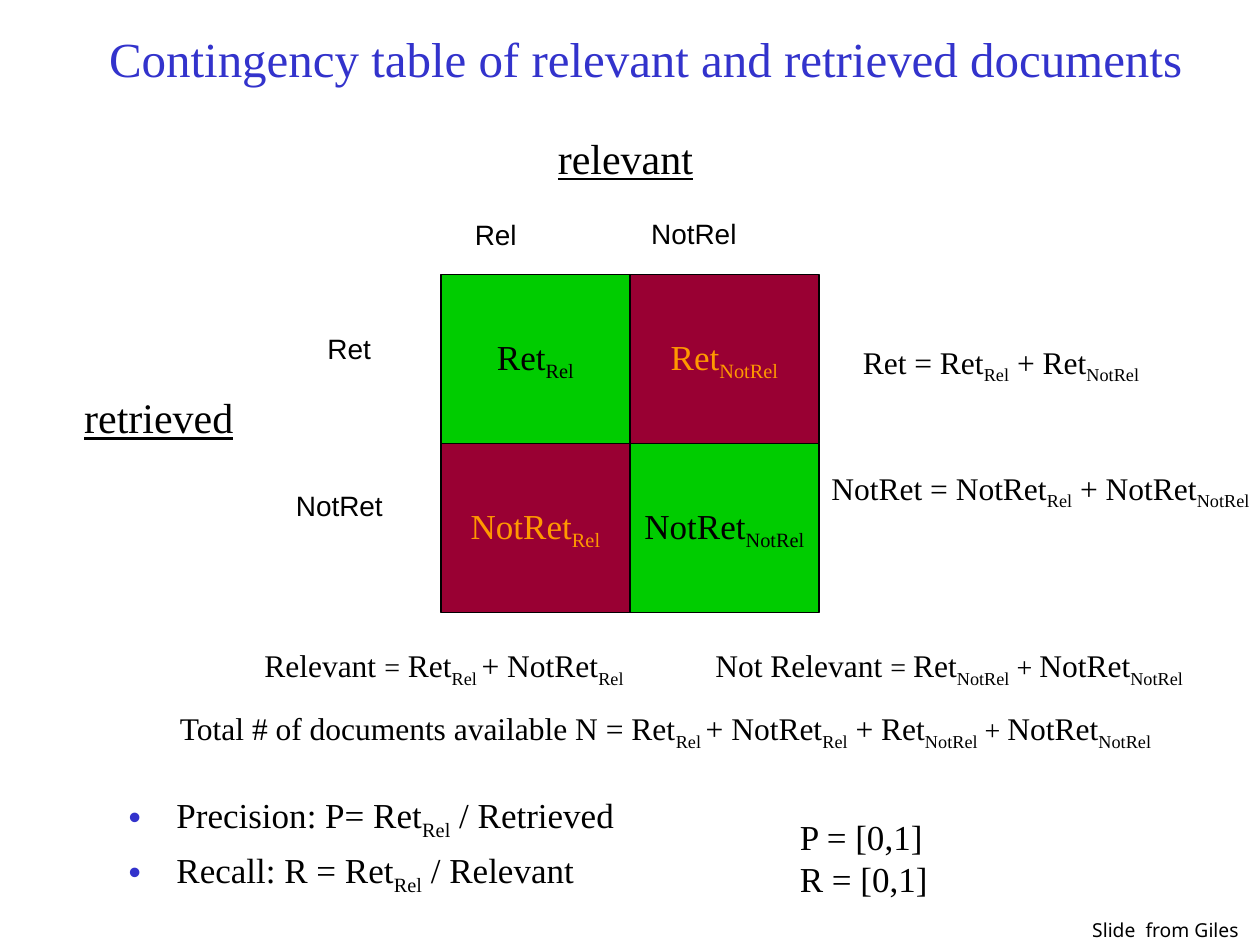
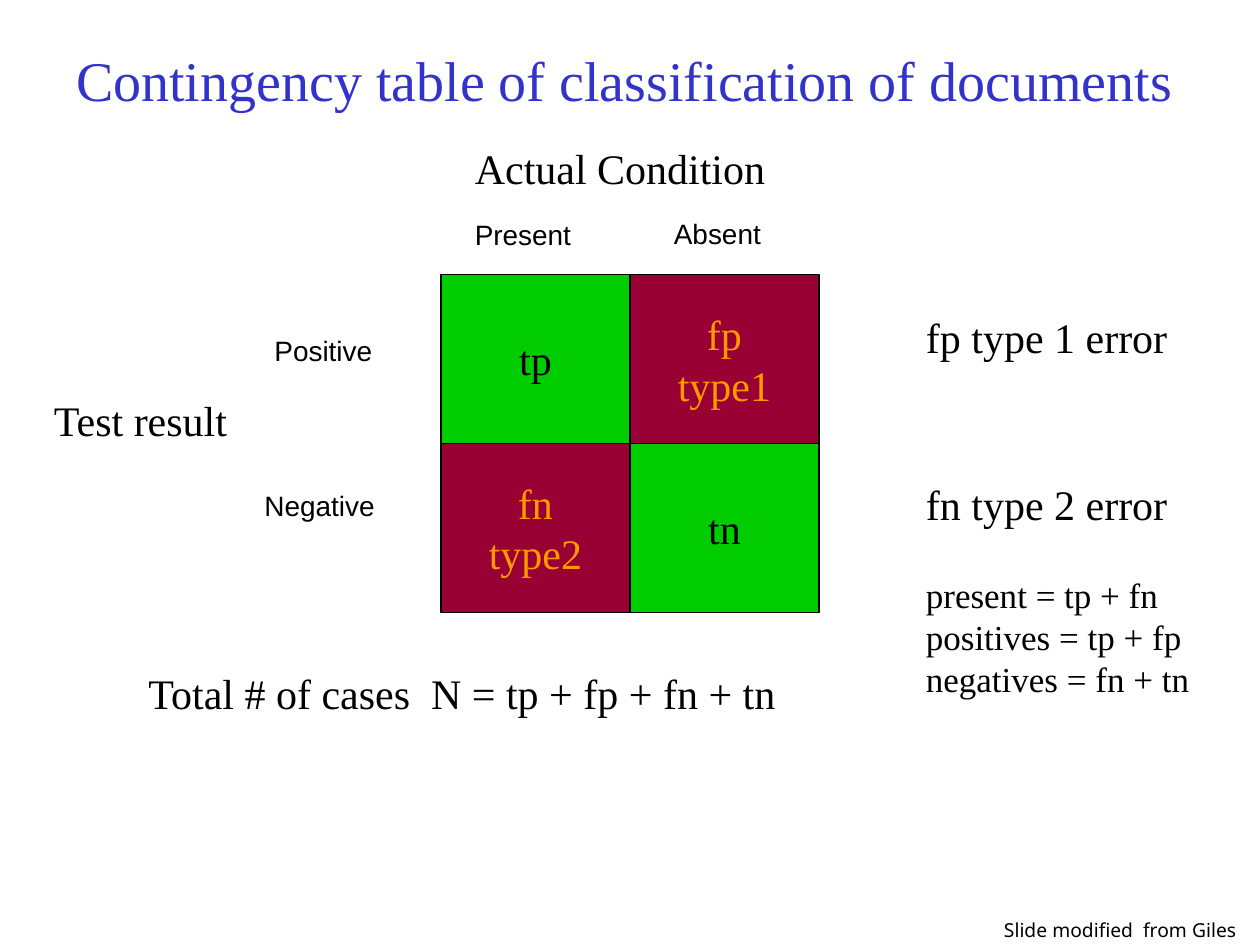
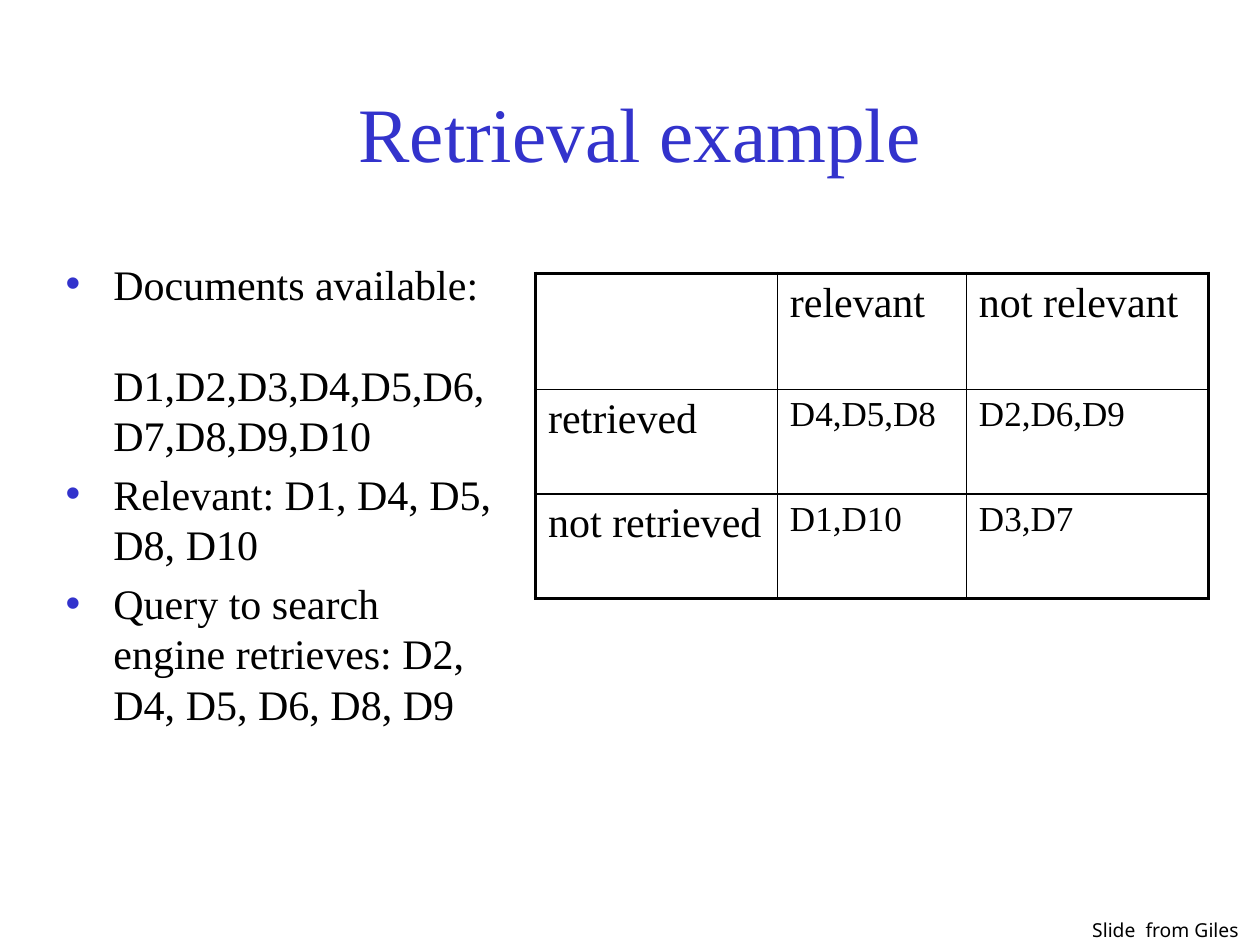
from lxml import etree
from pptx import Presentation
from pptx import util as u
from pptx.dml.color import RGBColor
from pptx.enum import shapes, text
from pptx.oxml import ns

HUES = {"ink": "000000", "blue": "3333CC", "green": "00CC00",
        "wine": "990033", "gold": "FF9900"}
SERIF, SANS, NOTE = "Times New Roman", "Arial", "Noto Sans"
MID, TOP = text.MSO_ANCHOR.MIDDLE, text.MSO_ANCHOR.TOP
FIT, FIXED = text.MSO_AUTO_SIZE.SHAPE_TO_FIT_TEXT, text.MSO_AUTO_SIZE.NONE
CENTER, LEFT = text.PP_ALIGN.CENTER, text.PP_ALIGN.LEFT
FULL, BARE = 1, 5


def apply(item, vals):
    for name, val in vals.items():
        setattr(item, name, val)


def place(left, top, width, height):
    sides = ("left", "top", "width", "height")
    return dict(zip(sides, map(u.Inches, (left, top, width, height))))


def add(parent, tag, **attrs):
    return etree.SubElement(parent, ns.qn(tag), attrs)


class Deck:
    def __init__(self):
        self.prs = Presentation()
        apply(self.prs, {"slide_width": u.Inches(10), "slide_height": u.Inches(7.5)})

    def start(self, layout, title, size, spot):
        self.slide = self.prs.slides.add_slide(self.prs.slide_layouts[layout])
        head = self.slide.shapes.title
        apply(head, place(*spot))
        self.fill_text(head.text_frame, title, size, hue="blue", align=CENTER,
                       frame={"vertical_anchor": MID, "auto_size": FIXED,
                              "word_wrap": True})

    def fill_text(self, target, words, size, face=SERIF, hue="ink", align=LEFT,
                  line=False, frame=None):
        apply(target, frame or {})
        for i, row in enumerate(words.split("\n")):
            para = target.add_paragraph() if i else target.paragraphs[0]
            para.alignment = align
            for j, part in enumerate(row.replace("}", "{").split("{")):
                if not part:
                    continue
                small = j % 2 and part.startswith("~")
                run = para.add_run()
                run.text = part.lstrip("~")
                apply(run.font, {"name": face, "size": u.Pt(16 if small else size),
                                 "underline": line, "bold": False})
                run.font.color.rgb = RGBColor.from_string(HUES[hue])
                if j % 2 and not small:
                    run._r.get_or_add_rPr().set("baseline", "-25000")

    def label(self, words, left, top, width, size=24, face=SERIF, line=False,
              wrap=False, tall=None):
        rows = words.count("\n") + 1
        height = tall or round(rows * size / 60 + 0.1, 2)
        box = self.slide.shapes.add_textbox(**place(left, top, width, height))
        self.fill_text(box.text_frame, words, size, face, line=line,
                       frame={"word_wrap": wrap, "auto_size": FIT,
                              "vertical_anchor": TOP})

    def bullets(self, words, size, spot, plain=()):
        body = self.slide.placeholders[1]
        apply(body, place(*spot))
        self.fill_text(body.text_frame, words, size,
                       frame={"auto_size": FIXED, "word_wrap": True})
        for i, para in enumerate(body.text_frame.paragraphs):
            if i in plain:
                para.space_before = u.Pt(size * 1.2)
            props = para._p.get_or_add_pPr()
            props.set("marL", str(u.Inches(0.38)))
            props.set("indent", "0" if i in plain else str(-u.Inches(0.38)))
            if i in plain:
                add(props, "a:buNone")
            else:
                add(add(props, "a:buClr"), "a:srgbClr", val=HUES["blue"])
                add(props, "a:buChar", char="•")

    def quad(self, words, size):
        for i, name in enumerate(words):
            row, col = divmod(i, 2)
            fill, hue = ("wine", "gold") if row != col else ("green", "ink")
            cell = self.slide.shapes.add_shape(
                shapes.MSO_SHAPE.RECTANGLE,
                **place(3.5 + 1.5 * col, 2.18 + 1.34 * row, 1.5, 1.34))
            cell.shadow.inherit = False
            cell.fill.solid()
            cell.fill.fore_color.rgb = RGBColor.from_string(HUES[fill])
            cell.line.color.rgb = RGBColor.from_string(HUES["ink"])
            cell.line.width = u.Pt(0.75)
            self.fill_text(cell.text_frame, name, size, hue=hue, align=CENTER,
                           frame={"word_wrap": False, "vertical_anchor": MID})

    def table(self, rows, widths, heights, left, top):
        grid = self.slide.shapes.add_table(
            len(rows), len(widths),
            **place(left, top, sum(widths), sum(heights))).table
        apply(grid, {"first_row": False, "horz_banding": False})
        for col, width in zip(grid.columns, widths):
            col.width = u.Inches(width)
        for row, height in zip(grid.rows, heights):
            row.height = u.Inches(height)
        for r, row in enumerate(rows):
            for c, words in enumerate(row):
                cell = grid.cell(r, c)
                self.fill_text(cell.text_frame, words, 20 if r and c else 24)
                edges = {"L": c == 0, "R": c == len(widths) - 1,
                         "T": r == 0, "B": r == len(rows) - 1}
                props = cell._tc.get_or_add_tcPr()
                for side, outer in edges.items():
                    rule = add(props, "a:ln" + side, w=str(u.Pt(2.25 if outer else 1)))
                    add(add(rule, "a:solidFill"), "a:srgbClr", val=HUES["ink"])
                cell.fill.background()

    def credit(self, words, left, width):
        self.label(words, left, 7.24, width, 11, NOTE)


def main():
    deck = Deck()

    deck.start(FULL, "Contingency table of relevant and retrieved documents", 28,
               (0.75, 0, 8.75, 0.92))
    deck.bullets("Precision: P= Ret{Rel} / Retrieved\nRecall: R = Ret{Rel} / Relevant",
                 20, (0.92, 6.25, 6.67, 1.08))
    deck.quad(["Ret{Rel}", "Ret{NotRel}", "NotRet{Rel}", "NotRet{NotRel}"], 20)
    for words, *spot in [
            ("Ret = Ret{Rel} + Ret{NotRel}", 6.75, 2.67, 2.56),
            ("NotRet = NotRet{Rel} + NotRet{NotRel}", 6.5, 3.67, 3.61),
            ("Relevant {~=} Ret{Rel }+ NotRet{Rel}", 2, 5.08, 3.12),
            ("Not Relevant {~= }Ret{NotRel}{~ + }NotRet{NotRel}", 5.58, 5.08, 4.04),
            ("Total # of documents available N = Ret{Rel }+ NotRet{Rel} + Ret{NotRel}"
             "{~ + }NotRet{NotRel}", 1.33, 5.58, 8.12)]:
        deck.label(words, *spot, size=18)
    for words, *spot in [("Rel", 3.67, 1.68, 0.53), ("NotRel", 5.07, 1.67, 0.88),
                         ("Ret", 2.5, 2.58, 0.55), ("NotRet", 2.25, 3.83, 0.89)]:
        deck.label(words, *spot, size=16, face=SANS)
    deck.label("P = [0,1]\nR = [0,1]", 6.25, 6.42, 1.83, 20, wrap=True)
    deck.label("retrieved", 0.57, 3.06, 1.39, line=True)
    deck.label("relevant", 4.33, 1, 1.27, line=True)
    deck.credit("Slide  from Giles", 8.57, 1.42)

    deck.start(BARE, "Contingency table of classification of documents", 32,
               (0.5, 0, 8.92, 1.25))
    deck.quad(["tp", "fp\ntype1", "fn\ntype2", "tn"], 24)
    for words, *spot in [("fp type 1 error", 7.25, 2.42, 2.12),
                         ("fn type 2 error", 7.25, 3.75, 2.12),
                         ("Test result", 0.33, 3.08, 1.6),
                         ("Actual Condition", 3.67, 1.08, 2.51)]:
        deck.label(words, *spot)
    for words, *spot in [("Present", 3.67, 1.68, 0.97), ("Absent", 5.25, 1.67, 0.89),
                         ("Positive", 2.08, 2.6, 0.98), ("Negative", 2, 3.83, 1.08)]:
        deck.label(words, *spot, size=16, face=SANS)
    deck.label("present = tp + fn\npositives = tp + fp\nnegatives = fn + tn",
               7.25, 4.5, 2.5, 20, wrap=True, tall=1.77)
    deck.label("Total # of cases  N = tp + fp + fn + tn", 1.08, 5.25, 5.5, wrap=True)
    deck.credit("Slide modified  from Giles", 7.87, 2.13)

    deck.start(FULL, "Retrieval example", 44, (0.83, 0.42, 8.5, 1.25))
    deck.table([["", "relevant", "not relevant"],
                ["retrieved", "D4,D5,D8", "D2,D6,D9"],
                ["not retrieved", "D1,D10", "D3,D7"]],
               (1.92, 1.5, 1.92), (0.92, 0.83, 0.83), 4.25, 2.17)
    deck.bullets("Documents available:\nD1,D2,D3,D4,D5,D6,D7,D8,D9,D10\n"
                 "Relevant: D1, D4, D5, D8, D10\n"
                 "Query to search engine retrieves: D2, D4, D5, D6, D8, D9",
                 24, (0.42, 2, 3.58, 4.5), plain=(1,))
    deck.credit("Slide  from Giles", 8.57, 1.42)

    deck.prs.save("out.pptx")


if __name__ == "__main__":
    main()
